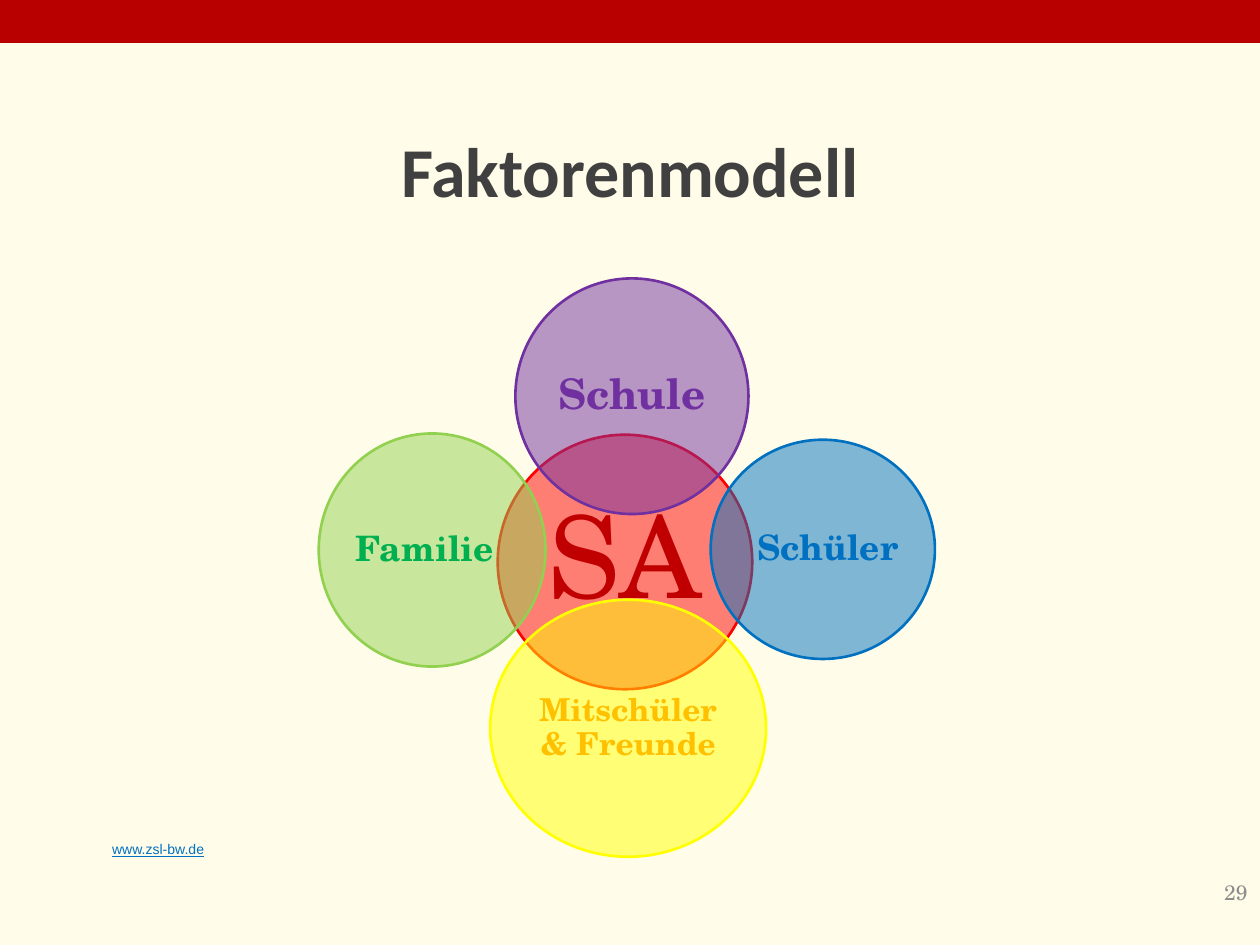
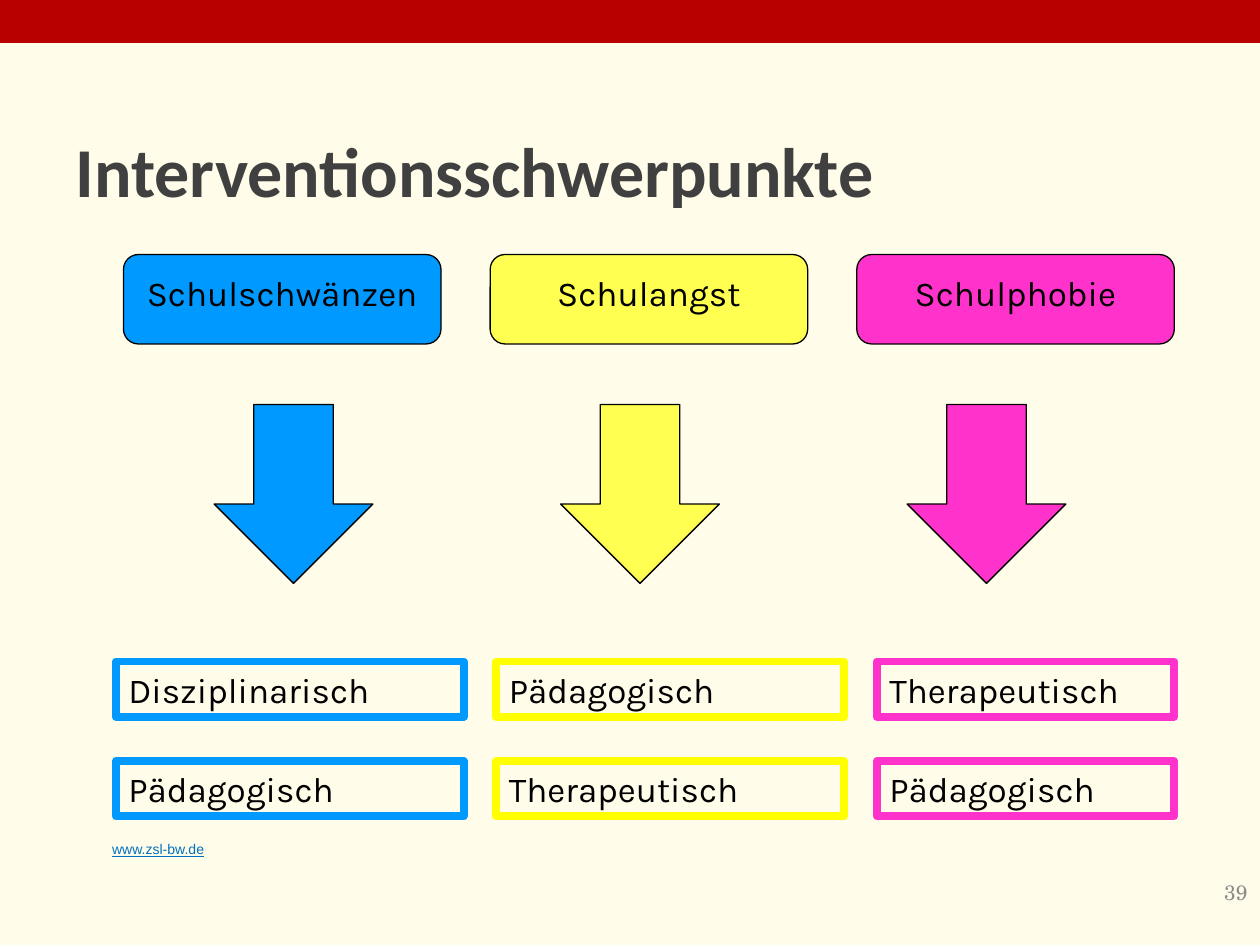
from dataclasses import dataclass

from lxml.etree import SubElement
from pptx import Presentation
from pptx.dml.color import RGBColor
from pptx.enum.shapes import MSO_SHAPE
from pptx.enum.text import MSO_ANCHOR, MSO_AUTO_SIZE, PP_ALIGN
from pptx.oxml.ns import qn
from pptx.util import Inches, Pt

# Shared look
COLUMNS, ROWS, CELL = 100, 75, Inches(0.1)
CREAM, BAND, TITLE, LINK, GREY, BLACK = "FFFDE9", "B80000", "404040", "0070C0", "8C8C8C", "000000"
SERIF, SANS, TITLE_FONT, LINK_FONT = "TeX Gyre Schola", "Karla", "Calibri", "Arial"


@dataclass
class Box:
    """An area in grid cells; inner() gives a part relative to it."""
    left: float
    top: float
    width: float
    height: float

    def inner(self, left, top, width, height):
        return Box(self.left + left, self.top + top, width, height)

    def lengths(self):
        return [round(cells * CELL) for cells in (self.left, self.top, self.width, self.height)]


def color(value):
    return RGBColor.from_string(value)


def add_form(page, kind, box, fill=None, line=None, weight=0.75, alpha=None):
    form = page.shapes.add_shape(kind, *box.lengths())
    form.shadow.inherit = False
    if fill:
        form.fill.solid()
        form.fill.fore_color.rgb = color(fill)
        if alpha:
            paint = form.fill._xPr.find(qn("a:solidFill"))[0]
            SubElement(paint, qn("a:alpha")).set("val", str(alpha * 1000))
    else:
        form.fill.background()
    if line:
        form.line.color.rgb = color(line)
        form.line.width = Pt(weight)
    else:
        form.line.fill.background()
    return form


def write(shape, text, font, size, ink, align=PP_ALIGN.LEFT, anchor=MSO_ANCHOR.MIDDLE,
          insets=(0.1, 0.05, 0.1, 0.05), bold=False, underline=False, spacing=None):
    frame = shape.text_frame
    frame.word_wrap = True
    frame.auto_size = MSO_AUTO_SIZE.NONE
    frame.vertical_anchor = anchor
    frame.margin_left, frame.margin_top, frame.margin_right, frame.margin_bottom = map(Inches, insets)
    para = frame.paragraphs[0]
    para.alignment = align
    if spacing:
        para.line_spacing = spacing
    span = para.add_run()
    span.text = text
    span.font.name, span.font.size = font, Pt(size)
    span.font.bold, span.font.underline = bold, underline
    span.font.color.rgb = color(ink)


def add_page(deck, title, number, title_align):
    """Background, band, title, web address and page number."""
    page = deck.slides.add_slide(deck.slide_layouts[5])
    page.background.fill.solid()
    page.background.fill.fore_color.rgb = color(CREAM)
    whole = Box(0, 0, COLUMNS, ROWS)

    add_form(page, MSO_SHAPE.RECTANGLE, whole.inner(0, 0, COLUMNS, 3.4), BAND)

    heading = page.shapes.title
    heading.left, heading.top, heading.width, heading.height = whole.inner(5, 7.6, 90, 11.7).lengths()
    write(heading, title, TITLE_FONT, 40, TITLE, title_align, bold=True)

    address = page.shapes.add_textbox(*whole.inner(7.8, 66.2, 9.5, 2.3).lengths())
    write(address, "www.zsl-bw.de", LINK_FONT, 8, LINK, PP_ALIGN.CENTER, MSO_ANCHOR.TOP, underline=True)

    page_number = page.shapes.add_textbox(*whole.inner(76.7, 68.3, 23.3, 5).lengths())
    write(page_number, number, SERIF, 12, GREY, PP_ALIGN.RIGHT)
    return page


def add_factor_circles(page, box):
    """Overlapping circles around the centre, from back to front."""
    narrow = (0.03, 0.03, 0.03, 0.03)
    shifted = (0.08, 0.03, 0, 0.03)
    center, left = PP_ALIGN.CENTER, PP_ALIGN.LEFT
    circles = [
        ("SA", (14.2, 12.4, 20.2, 20.2), "FF0000", "C00000", 65, center, narrow),
        ("Schule", (15.6, 0, 18.5, 18.7), "7030A0", "7030A0", 24, center, narrow),
        ("Schüler", (31.1, 12.8, 17.8, 17.4), "0070C0", "0070C0", 20, center, shifted),
        ("Mitschüler & Freunde", (13.6, 25.5, 21.9, 20.4), "FFFF00", "FFC000", 18, center, narrow),
        ("Familie", (0, 12.3, 18, 18.5), "92D050", "00B050", 20, left, narrow),
    ]
    for label, place, paint, ink, size, align, insets in circles:
        circle = add_form(page, MSO_SHAPE.OVAL, box.inner(*place), paint, paint, 1.5, alpha=50)
        write(circle, label, SERIF, size, ink, align, insets=insets, bold=label != "SA", spacing=0.9)


def add_problem_cards(page, box, problems):
    """Coloured cards with the kinds of absence."""
    for index, (name, paint) in enumerate(problems):
        card = add_form(page, MSO_SHAPE.ROUNDED_RECTANGLE, box.inner(index * 29.1, 0, 25.2, box.height),
                        paint, BLACK)
        write(card, name, SANS, 20, BLACK, PP_ALIGN.CENTER, MSO_ANCHOR.TOP, (0.05, 0.1, 0.05, 0))


def add_arrows(page, box, paints):
    """Arrows leading from the cards down to the measures."""
    for index, paint in enumerate(paints):
        add_form(page, MSO_SHAPE.DOWN_ARROW, box.inner(index * 27.5, 0, 12.6, box.height), paint, BLACK)


def add_measures(page, box, measures):
    """Outlined measures, first priority above second."""
    for index, (paint, width, names) in enumerate(measures):
        for rank, name in enumerate(names):
            frame = add_form(page, MSO_SHAPE.RECTANGLE, box.inner(index * 30.2, rank * 7.9, width, 4.4),
                             line=paint, weight=4.5)
            write(frame, name, SANS, 20, BLACK)


def build_factor_model(deck):
    page = add_page(deck, "Faktorenmodell", "29", PP_ALIGN.CENTER)
    add_factor_circles(page, Box(25.3, 22.1, 48.9, 45.9))


def build_interventions(deck):
    page = add_page(deck, "Interventionsschwerpunkte", "39", PP_ALIGN.LEFT)
    blue, yellow, pink = "0099FF", "FFFF51", "FF33CC"
    add_problem_cards(page, Box(9.8, 20.2, 83.4, 7.1),
                      [("Schulschwänzen", blue), ("Schulangst", yellow), ("Schulphobie", pink)])
    add_arrows(page, Box(17, 32.1, 67.6, 14.2), [blue, yellow, pink])
    add_measures(page, Box(9.2, 52.5, 84, 12.3), [
        (blue, 27.6, ("Disziplinarisch", "Pädagogisch")),
        ("FFFF00", 27.6, ("Pädagogisch", "Therapeutisch")),
        (pink, 23.6, ("Therapeutisch", "Pädagogisch")),
    ])


def main():
    deck = Presentation()
    deck.slide_width, deck.slide_height = COLUMNS * CELL, ROWS * CELL
    build_factor_model(deck)
    build_interventions(deck)
    deck.save("out.pptx")


if __name__ == "__main__":
    main()
